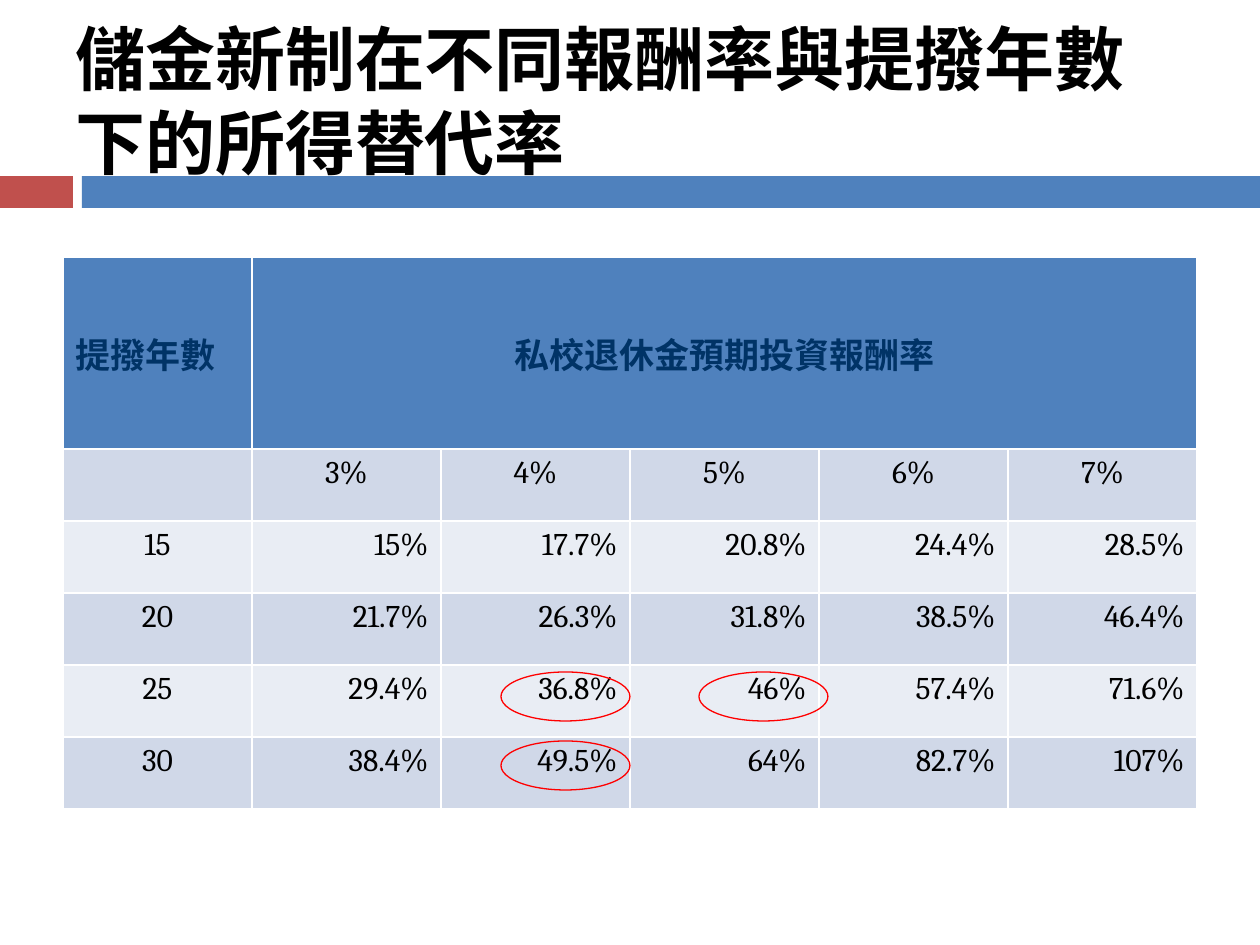
from lxml.etree import SubElement
from pptx import Presentation
from pptx.dml.color import RGBColor
from pptx.enum.shapes import MSO_SHAPE
from pptx.enum.text import MSO_ANCHOR, PP_ALIGN
from pptx.oxml.ns import qn
from pptx.util import Emu, Pt

SCALE = 914400 / 126
BLACK = RGBColor(0x00, 0x00, 0x00)
NAVY = RGBColor(0x00, 0x33, 0x66)
BLUE = RGBColor(0x4F, 0x81, 0xBD)
BRICK = RGBColor(0xC0, 0x50, 0x4D)
RED = RGBColor(0xFF, 0x00, 0x00)
BANDS = RGBColor(0xD0, 0xD8, 0xE8), RGBColor(0xE9, 0xED, 0xF4)

HEADS = ["提撥年數", "私校退休金預期投資報酬率"]
ROWS = [
    ["", "3%", "4%", "5%", "6%", "7%"],
    ["15", "15%", "17.7%", "20.8%", "24.4%", "28.5%"],
    ["20", "21.7%", "26.3%", "31.8%", "38.5%", "46.4%"],
    ["25", "29.4%", "36.8%", "46%", "57.4%", "71.6%"],
    ["30", "38.4%", "49.5%", "64%", "82.7%", "107%"],
]
RINGS = [(501, 741), (699, 672), (501, 672)]


def px(size):
    return Emu(round(size * SCALE))


def add_run(para, text, font, size, color, bold=False):
    run = para.add_run()
    run.text = text
    run.font.name = font
    run.font.size = Pt(size)
    run.font.bold = bold
    run.font.color.rgb = color
    SubElement(run.font._element, qn("a:ea")).set("typeface", font)


def add_bar(slide, left, width, color):
    bar = slide.shapes.add_shape(
        MSO_SHAPE.RECTANGLE, px(left), px(176), px(width), px(32))
    bar.shadow.inherit = False
    bar.fill.solid()
    bar.fill.fore_color.rgb = color
    bar.line.fill.background()


def add_title(slide, text):
    box = slide.shapes.add_textbox(px(63), px(21), px(1134), px(157))
    frame = box.text_frame
    frame.word_wrap = True
    frame.vertical_anchor = MSO_ANCHOR.MIDDLE
    para = frame.paragraphs[0]
    para.line_spacing = Pt(48)
    add_run(para, text, "Noto Sans CJK TC", 40, BLACK, True)


def fill_cell(cell, color, align):
    cell.fill.solid()
    cell.fill.fore_color.rgb = color
    para = cell.text_frame.paragraphs[0]
    para.alignment = align
    return para


def add_grid(slide):
    count = len(ROWS[0])
    table = slide.shapes.add_table(
        len(ROWS) + 1, count, px(63), px(257), px(1134), px(552)).table
    for col in table.columns:
        col.width = px(189)
    for row in table.rows:
        row.height = px(72)
    table.rows[0].height = px(192)
    table.cell(0, 1).merge(table.cell(0, count - 1))
    for c, (text, align) in enumerate(zip(HEADS, (PP_ALIGN.LEFT, PP_ALIGN.CENTER))):
        cell = table.cell(0, c)
        cell.vertical_anchor = MSO_ANCHOR.MIDDLE
        para = fill_cell(cell, BLUE, align)
        add_run(para, text, "Noto Sans CJK SC", 20, NAVY, True)
    for r, row in enumerate(ROWS):
        for c, text in enumerate(row):
            align = PP_ALIGN.RIGHT if r and c else PP_ALIGN.CENTER
            para = fill_cell(table.cell(r + 1, c), BANDS[r % 2], align)
            if text:
                add_run(para, text, "Cambria", 18, BLACK)


def add_ring(slide, left, top):
    ring = slide.shapes.add_shape(
        MSO_SHAPE.OVAL, px(left), px(top), px(129), px(49))
    ring.shadow.inherit = False
    ring.fill.background()
    ring.line.color.rgb = RED
    ring.line.width = Pt(0.75)


def main():
    deck = Presentation()
    deck.slide_width, deck.slide_height = px(1260), px(945)
    slide = deck.slides.add_slide(deck.slide_layouts[6])
    add_bar(slide, 0, 73, BRICK)
    add_bar(slide, 82, 1178, BLUE)
    add_title(slide, "儲金新制在不同報酬率與提撥年數下的所得替代率")
    add_grid(slide)
    for left, top in RINGS:
        add_ring(slide, left, top)
    deck.save("out.pptx")


if __name__ == "__main__":
    main()
